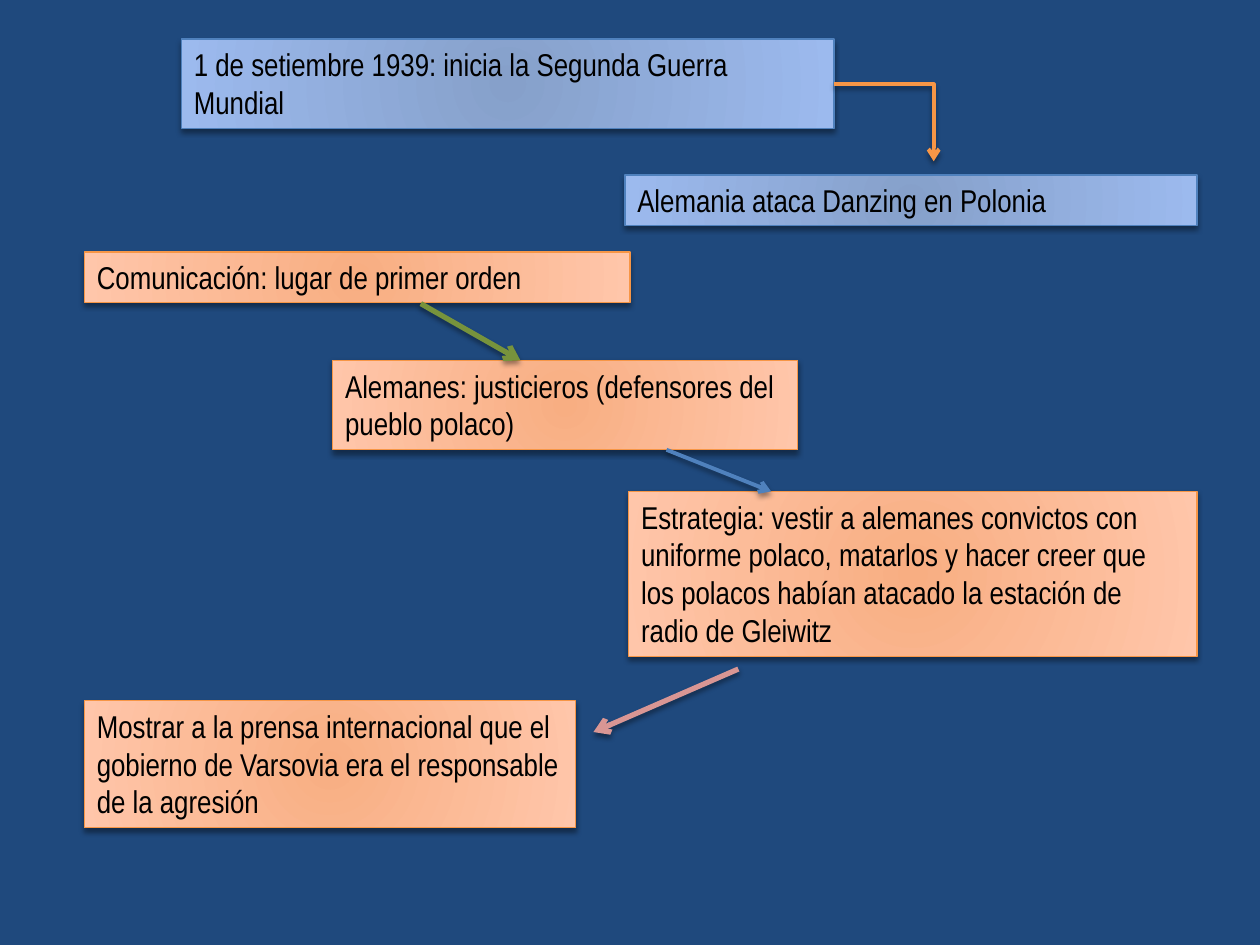
from lxml.etree import SubElement
from pptx import Presentation
from pptx.dml.color import RGBColor
from pptx.enum.shapes import MSO_CONNECTOR, MSO_SHAPE
from pptx.enum.text import MSO_ANCHOR, MSO_AUTO_SIZE, PP_ALIGN
from pptx.oxml.ns import qn
from pptx.util import Inches, Pt

FONT = "Arial Narrow"
# Centre, edge and outline colours of each kind of step
EVENT = ("86A0CA", "9CBAEE", "4F81BD")
PROPAGANDA = ("F8AE82", "FFC6AA", "F79646")

STEPS = [
    (1.44, 0.31, 5.18, 0.71, EVENT,
     "1 de setiembre 1939: inicia la Segunda Guerra Mundial"),
    (4.96, 1.39, 4.54, 0.4, EVENT, "Alemania ataca Danzing en Polonia"),
    (0.67, 2, 4.33, 0.4, PROPAGANDA, "Comunicación: lugar de primer orden"),
    (2.64, 2.86, 3.69, 0.71, PROPAGANDA,
     "Alemanes: justicieros (defensores del pueblo polaco)"),
    (4.99, 3.9, 4.51, 1.31, PROPAGANDA,
     "Estrategia: vestir a alemanes convictos con uniforme polaco, matarlos "
     "y hacer creer que los polacos habían atacado la estación de radio de "
     "Gleiwitz"),
    (0.67, 5.56, 3.9, 1.01, PROPAGANDA,
     "Mostrar a la prensa internacional que el gobierno de Varsovia era el "
     "responsable de la agresión"),
]

ARROWS = [
    ((3.34, 2.41), (4.13, 2.86), "77933C", 3),
    ((5.29, 3.57), (6.12, 3.9), "4F81BD", 2.25),
    ((5.86, 5.31), (4.71, 5.81), "D99694", 3),
]


def color(hex_text):
    return RGBColor.from_string(hex_text)


def add_shadow(effects):
    shadow = SubElement(effects, qn("a:outerShdw"), blurRad=str(Pt(3)),
                        dist=str(Pt(2)), dir="5400000", rotWithShape="0")
    black = SubElement(shadow, qn("a:srgbClr"), val="000000")
    SubElement(black, qn("a:alpha"), val="40000")


def fill_radial(shape, center, edge):
    shape.fill.gradient()
    for stop, hex_text in zip(shape.fill.gradient_stops, (center, edge)):
        stop.color.rgb = color(hex_text)
    gradient = shape._element.spPr.find(qn("a:gradFill"))
    gradient.remove(gradient.find(qn("a:lin")))
    circle = SubElement(gradient, qn("a:path"), path="circle")
    SubElement(circle, qn("a:fillToRect"), dict.fromkeys("ltrb", "100000"))


def add_step(slide, left, top, width, height, palette, text):
    center, edge, outline = palette
    step = slide.shapes.add_shape(MSO_SHAPE.RECTANGLE, Inches(left),
                                  Inches(top), Inches(width), Inches(height))
    fill_radial(step, center, edge)
    step.line.color.rgb = color(outline)
    step.line.width = Pt(0.75)
    step.shadow.inherit = False
    add_shadow(step._element.spPr.find(qn("a:effectLst")))

    frame = step.text_frame
    frame.word_wrap = True
    frame.auto_size = MSO_AUTO_SIZE.SHAPE_TO_FIT_TEXT
    frame.vertical_anchor = MSO_ANCHOR.TOP
    paragraph = frame.paragraphs[0]
    paragraph.text = text
    paragraph.alignment = PP_ALIGN.LEFT
    paragraph.font.name = FONT
    paragraph.font.size = Pt(18)
    paragraph.font.color.rgb = color("000000")


def add_arrow(slide, start, end, hex_text, width, kind=MSO_CONNECTOR.STRAIGHT):
    arrow = slide.shapes.add_connector(kind, *map(Inches, start + end))
    arrow.line.color.rgb = color(hex_text)
    arrow.line.width = Pt(width)
    properties = arrow._element.spPr
    SubElement(properties.find(qn("a:ln")), qn("a:tailEnd"), type="arrow")
    add_shadow(SubElement(properties, qn("a:effectLst")))
    return arrow


def add_corner_arrow(slide, start, end, hex_text, width):
    """Arrow with a single bend: across, then down."""
    arrow = add_arrow(slide, start, end, hex_text, width, MSO_CONNECTOR.ELBOW)
    geometry = arrow._element.spPr.find(qn("a:prstGeom"))
    geometry.set("prst", "bentConnector2")


def main():
    presentation = Presentation()
    presentation.slide_width = Inches(10)
    presentation.slide_height = Inches(7.5)
    slide = presentation.slides.add_slide(presentation.slide_layouts[6])
    slide.background.fill.solid()
    slide.background.fill.fore_color.rgb = color("1F497D")

    for step in STEPS:
        add_step(slide, *step)
    for arrow in ARROWS:
        add_arrow(slide, *arrow)
    add_corner_arrow(slide, (6.62, 0.67), (7.41, 1.28), "F79646", 2.25)

    presentation.save("out.pptx")


if __name__ == "__main__":
    main()
